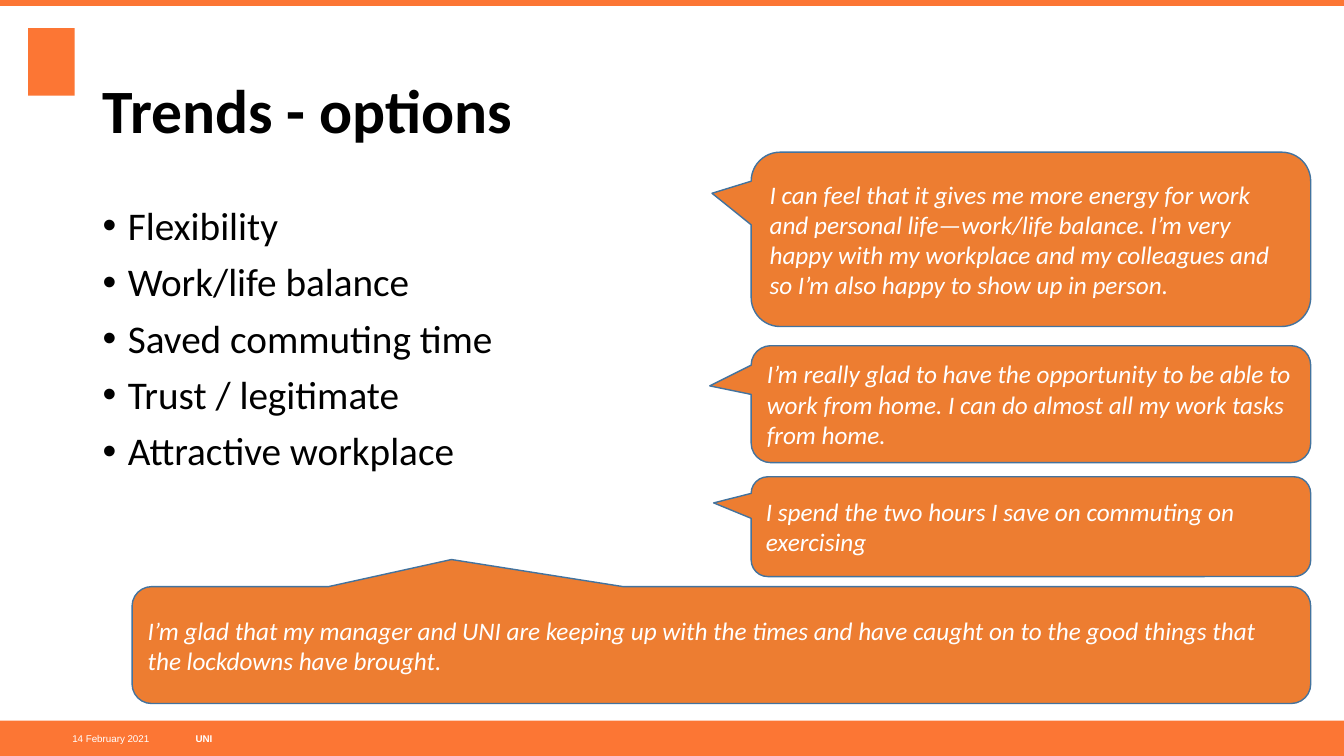
from dataclasses import dataclass

import pptx
import pptx.dml.color
import pptx.enum.shapes
import pptx.enum.text
import pptx.oxml
import pptx.oxml.ns
import pptx.util
from pptx.util import Inches, Pt

SHAPE = pptx.enum.shapes.MSO_SHAPE
ANCHOR = pptx.enum.text.MSO_ANCHOR
ALIGN = pptx.enum.text.PP_ALIGN
RGB = pptx.dml.color.RGBColor


@dataclass(frozen=True)
class Theme:
    band: RGB = RGB(0xFC, 0x76, 0x34)
    callout: RGB = RGB(0xED, 0x7D, 0x31)
    outline: RGB = RGB(0x43, 0x73, 0x9E)
    black: RGB = RGB(0, 0, 0)
    white: RGB = RGB(0xFF, 0xFF, 0xFF)
    text_font: str = "Calibri"
    footer_font: str = "Arial"
    title_size: Pt = Pt(44)
    option_size: Pt = Pt(28)
    quote_size: Pt = Pt(18)
    footer_size: Pt = Pt(7)


theme = Theme()


def style(paragraph, size, color, font=theme.text_font, bold=False, italic=False, align=ALIGN.LEFT):
    paragraph.alignment = align
    paragraph.font.name = font
    paragraph.font.size = size
    paragraph.font.color.rgb = color
    paragraph.font.bold = bold
    paragraph.font.italic = italic


def add_filled(kind, box, fill):
    shape = slide.shapes.add_shape(kind, *map(Inches, box))
    shape.shadow.inherit = False
    shape.fill.solid()
    shape.fill.fore_color.rgb = fill
    shape.line.fill.background()
    return shape


deck = pptx.Presentation()
deck.slide_width, deck.slide_height = Inches(13.33), Inches(7.5)
slide = deck.slides.add_slide(deck.slide_layouts[5])

# Page frame: emblem block, footer band and top band
for box in [(0.28, 0.28, 0.46, 0.67), (0, 7.15, 13.33, 0.35), (0, 0, 13.33, 0.06)]:
    add_filled(SHAPE.RECTANGLE, box, theme.band)

# Footer
for text, left, width, bold, align in [
    ("UNI", 1.94, 3.72, True, ALIGN.LEFT),
    ("14 February 2021", 0.27, 1.21, False, ALIGN.RIGHT),
]:
    footer = slide.shapes.add_textbox(Inches(left), Inches(7.15), Inches(width), Inches(0.35)).text_frame
    footer.word_wrap = True
    footer.vertical_anchor = ANCHOR.MIDDLE
    footer.margin_left = footer.margin_right = footer.margin_top = footer.margin_bottom = 0
    footer.text = text
    style(footer.paragraphs[0], theme.footer_size, theme.white, theme.footer_font, bold, align=align)

# Title
title = slide.shapes.title
title.left, title.top, title.width, title.height = map(Inches, (0.92, 0.4, 11.5, 1.45))
title.text_frame.text = "Trends - options"
title.text_frame.vertical_anchor = ANCHOR.MIDDLE
title.text_frame.paragraphs[0].line_spacing = 0.9
style(title.text_frame.paragraphs[0], theme.title_size, theme.black, bold=True)

# Options
options = slide.shapes.add_textbox(Inches(0.92), Inches(2), Inches(11.5), Inches(4.76)).text_frame
options.word_wrap = True
options.text = "\n".join([
    "Flexibility",
    "Work/life balance",
    "Saved commuting time",
    "Trust / legitimate",
    "Attractive workplace",
])
for option in options.paragraphs:
    style(option, theme.option_size, theme.black)
    option.line_spacing = 0.9
    option.space_before = Pt(10)
    properties = option._p.get_or_add_pPr()
    properties.set("marL", str(Inches(0.25)))
    properties.set("indent", str(-Inches(0.25)))
    for bullet_xml in ('<a:buFont {} typeface="Arial"/>', '<a:buChar {} char="•"/>'):
        bullet = pptx.oxml.parse_xml(bullet_xml.format(pptx.oxml.ns.nsdecls("a")))
        properties.insert_element_before(bullet, "a:tabLst", "a:defRPr", "a:extLst")

# Quotes: box, then the tip of the pointer relative to the box centre
quotes = [
    ((7.45, 1.51, 5.55, 1.73), (-0.57, -0.264),
     "I can feel that it gives me more energy for work and personal life—work/life balance. "
     "I’m very happy with my workplace and my colleagues and so I’m also happy to show up in person."),
    ((7.45, 4.73, 5.55, 0.99), (-0.567, -0.238),
     "I spend the two hours I save on commuting on exercising"),
    ((7.45, 3.43, 5.55, 1.16), (-0.574, -0.156),
     "I’m really glad to have the opportunity to be able to work from home. "
     "I can do almost all my work tasks from home."),
    ((1.31, 5.82, 11.69, 1.16), (-0.229, -0.732),
     "I’m glad that my manager and UNI are keeping up with the times and have caught on "
     "to the good things that the lockdowns have brought."),
]
for box, (tip_x, tip_y), words in quotes:
    quote = add_filled(SHAPE.ROUNDED_RECTANGULAR_CALLOUT, box, theme.callout)
    quote.adjustments[0], quote.adjustments[1] = tip_x, tip_y
    quote.line.color.rgb = theme.outline
    quote.line.width = Pt(1)
    quote.text_frame.word_wrap = True
    quote.text_frame.vertical_anchor = ANCHOR.MIDDLE
    quote.text_frame.text = words
    style(quote.text_frame.paragraphs[0], theme.quote_size, theme.white, italic=True)

deck.save("out.pptx")
